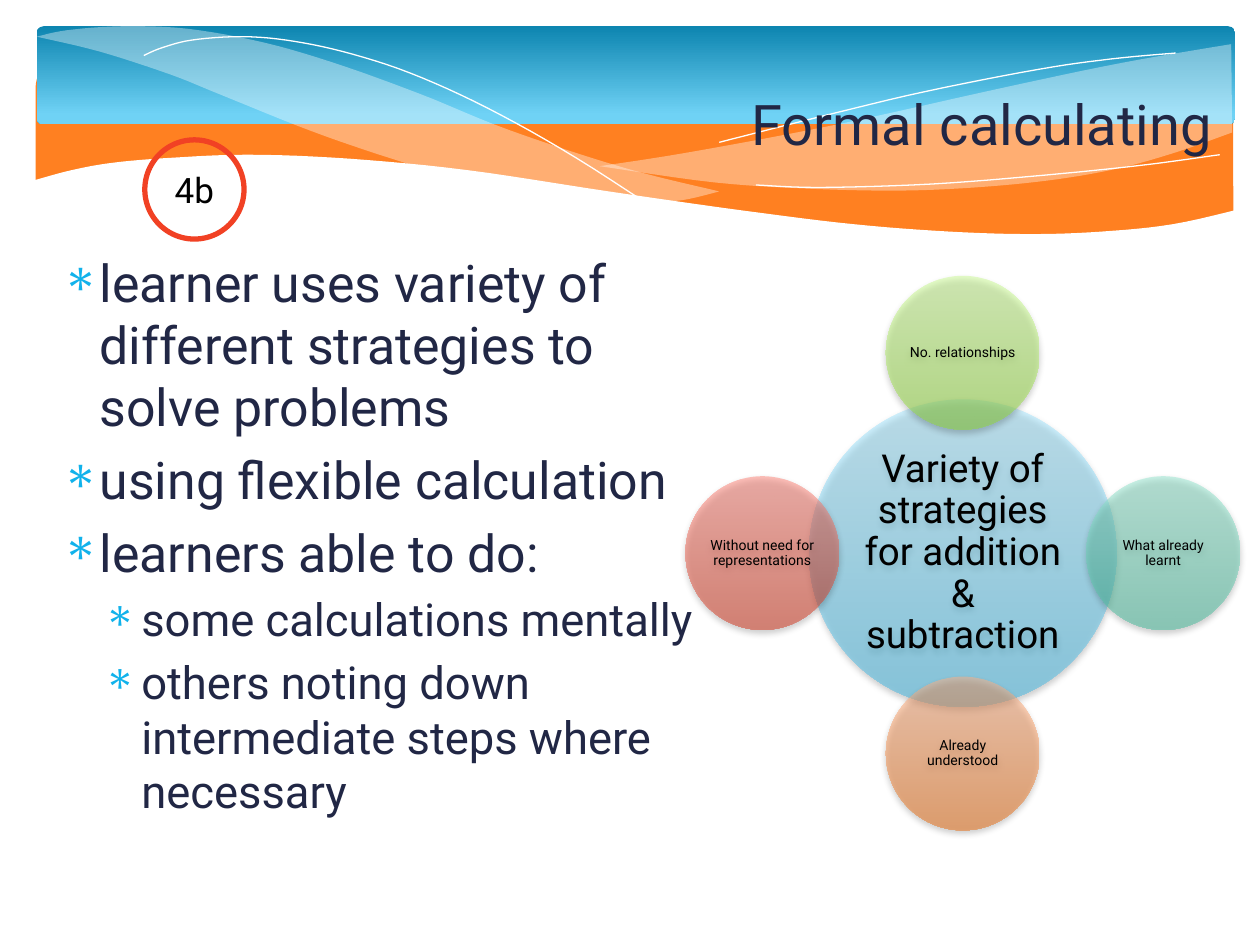
from dataclasses import dataclass
from math import cos, radians, sin

from lxml import etree
from pptx import Presentation
from pptx.dml.color import RGBColor
from pptx.enum.shapes import MSO_SHAPE
from pptx.enum.text import MSO_ANCHOR, PP_ALIGN
from pptx.oxml.ns import qn
from pptx.util import Cm, Pt

ROUNDED, ELLIPSE = MSO_SHAPE.ROUNDED_RECTANGLE, MSO_SHAPE.OVAL
MIDDLE, TOP = MSO_ANCHOR.MIDDLE, MSO_ANCHOR.TOP
CENTER, RIGHT = PP_ALIGN.CENTER, PP_ALIGN.RIGHT

FONT = "Roboto"
WHITE = RGBColor(0xFF, 0xFF, 0xFF)
BLACK = RGBColor(0x00, 0x00, 0x00)
NAVY = RGBColor(0x21, 0x27, 0x45)
ORANGE = RGBColor(0xFF, 0x80, 0x21)
RED = RGBColor(0xF1, 0x41, 0x24)
BULLET_BLUE = RGBColor(0x11, 0xB2, 0xEB)
SKY = (RGBColor(0x0D, 0x85, 0xB0), RGBColor(0x6F, 0xD2, 0xF5))
BLUE = (RGBColor(0xA6, 0xE7, 0xFF), RGBColor(0x3D, 0xB8, 0xE3))
GREEN = (RGBColor(0xCC, 0xFB, 0x94), RGBColor(0x91, 0xDA, 0x35))
TEAL = (RGBColor(0x94, 0xE6, 0xCF), RGBColor(0x43, 0xBC, 0x9B))
AMBER = (RGBColor(0xFF, 0xB1, 0x85), RGBColor(0xE9, 0x6B, 0x0D))
CORAL = (RGBColor(0xFF, 0x83, 0x77), RGBColor(0xD4, 0x33, 0x19))

Points = list[tuple[float, float]]


@dataclass
class Wave:
    """Smooth edges in cm, joined at corners; opacity None means a thin open line."""
    edges: list[Points]
    opacity: int | None = None


@dataclass
class Bubble:
    text: str
    colors: tuple[RGBColor, RGBColor]
    angle: float


@dataclass
class Bullet:
    text: str
    level: int = 0


WAVES = [
    Wave([[(24.82, 0.89), (22.6, 1.27), (20.17, 1.78), (16.87, 2.51), (13.89, 3.07), (12.09, 3.35)],
          [(12.09, 3.35), (14.43, 3.68), (16.46, 3.81), (18.29, 3.84), (19.91, 3.76),
           (21.34, 3.61), (22.61, 3.38), (23.77, 3.05), (24.84, 2.67)]], 37),
    Wave([[(14.5, 3.86), (12.57, 3.38), (10.26, 2.62), (8.51, 1.91), (6.83, 1.3),
           (5.33, 0.86), (3.78, 0.58), (2.44, 0.53), (1.35, 0.61), (0.74, 0.74)],
          [(0.74, 0.74), (2.01, 1.04), (3.43, 1.5), (4.45, 1.91), (6.27, 2.64), (7.9, 3.2),
           (9.35, 3.63), (10.64, 3.91), (11.79, 4.06), (12.8, 4.09), (13.72, 4.04), (14.5, 3.86)]], 37),
    Wave([[(2.9, 1.12), (3.25, 0.97), (3.86, 0.81), (4.83, 0.74), (5.77, 0.81),
           (6.91, 1.04), (8.26, 1.47), (9.83, 2.18), (11.61, 3.18), (13.64, 4.5)]]),
    Wave([[(14.5, 2.87), (16.59, 2.34), (18.64, 1.85), (20.93, 1.4), (22.4, 1.19), (23.7, 1.07)]]),
    Wave([[(25.1, 4.19), (23.65, 4.52), (22.2, 4.67), (20.78, 4.72), (19.15, 4.67),
           (17.2, 4.52), (14.94, 4.24), (12.27, 3.86), (9.42, 3.43), (7.04, 3.2),
           (5.05, 3.12), (3.48, 3.18), (2.29, 3.28), (1.45, 3.43), (0.71, 3.63)],
          [(0.71, 5.61), (25.1, 5.61)]], 100),
    Wave([[(24.59, 3.12), (23.04, 3.33), (21.08, 3.53), (18.8, 3.71), (16.54, 3.78), (15.24, 3.73)]]),
]
BULLETS = [
    Bullet("learner uses variety of different strategies to solve problems"),
    Bullet("using flexible calculation"),
    Bullet("learners able to do:"),
    Bullet("some calculations mentally", 1),
    Bullet("others noting down intermediate steps where necessary", 1),
]
LEVEL_SIZES = (29.6, 25.9)
LEVEL_MARGINS = (0.76, 1.6)
LEVEL_GAPS = (6, 5)
HUB = Bubble("Variety of strategies for addition & subtraction", BLUE, 0)
SATELLITES = [
    Bubble("No. relationships", GREEN, -90),
    Bubble("What already learnt", TEAL, 0),
    Bubble("Already understood", AMBER, 90),
    Bubble("Without need for representations", CORAL, 180),
]
HUB_X, HUB_Y, ORBIT = 19.41, 11.15, 4.04


def smooth(points: Points, steps: int = 6) -> Points:
    """Sample a Catmull-Rom curve through the points."""
    if len(points) < 3:
        return points
    padded = [points[0], *points, points[-1]]
    curve = [points[0]]
    for a, b, c, d in zip(padded, padded[1:], padded[2:], padded[3:]):
        for step in range(1, steps + 1):
            t = step / steps
            curve.append(tuple(
                0.5 * (2 * q + (r - p) * t + (2 * p - 5 * q + 4 * r - s) * t ** 2
                       + (3 * q - p - 3 * r + s) * t ** 3)
                for p, q, r, s in zip(a, b, c, d)))
    return curve


def set_opacity(shape, percent: int) -> None:
    for color in shape._element.spPr.iter(qn("a:srgbClr")):
        etree.SubElement(color, qn("a:alpha"), val=str(percent * 1000))


def fill_downward(shape, colors: tuple[RGBColor, RGBColor], end: float = 1) -> None:
    shape.fill.gradient()
    shape.fill.gradient_angle = 270
    for stop, color, position in zip(shape.fill.gradient_stops, colors, (0, end)):
        stop.color.rgb = color
        stop.position = position


def add_plain_shape(slide, kind, left: float, top: float, width: float, height: float):
    shape = slide.shapes.add_shape(kind, Cm(left), Cm(top), Cm(width), Cm(height))
    shape.shadow.inherit = False
    shape.line.fill.background()
    return shape


def add_wave(slide, wave: Wave) -> None:
    outline = [(Cm(x), Cm(y)) for edge in wave.edges for x, y in smooth(edge)]
    closed = wave.opacity is not None
    builder = slide.shapes.build_freeform(*outline[0], scale=1.0)
    builder.add_line_segments(outline[1:], close=closed)
    shape = builder.convert_to_shape()
    shape.shadow.inherit = False
    if closed:
        shape.fill.solid()
        shape.fill.fore_color.rgb = WHITE
        set_opacity(shape, wave.opacity)
        shape.line.fill.background()
    else:
        shape.fill.background()
        shape.line.color.rgb = WHITE
        shape.line.width = Pt(0)


def add_span(para, text: str, size: float, color: RGBColor) -> None:
    span = para.add_run()
    span.text = text
    span.font.name = FONT
    span.font.size = Pt(size)
    span.font.color.rgb = color


def write_line(shape, text: str, size: float, color: RGBColor, align, inset: float):
    frame = shape.text_frame
    frame.word_wrap = True
    frame.vertical_anchor = MIDDLE
    frame.margin_left = frame.margin_right = frame.margin_top = frame.margin_bottom = Cm(inset)
    para = frame.paragraphs[0]
    para.alignment = align
    add_span(para, text, size, color)
    return para


def add_bubble(slide, bubble: Bubble, x: float, y: float, diameter: float, size: float, inset: float) -> None:
    shape = add_plain_shape(slide, ELLIPSE, x - diameter / 2, y - diameter / 2, diameter, diameter)
    fill_downward(shape, bubble.colors)
    set_opacity(shape, 50)
    effects = shape._element.spPr.find(qn("a:effectLst"))
    shadow = etree.SubElement(effects, qn("a:outerShdw"), blurRad=str(Pt(4)), dist=str(Pt(2)),
                              dir="5400000", rotWithShape="0")
    color = etree.SubElement(shadow, qn("a:srgbClr"), val=str(BLACK))
    etree.SubElement(color, qn("a:alpha"), val="38000")
    write_line(shape, bubble.text, size, BLACK, CENTER, inset).line_spacing = 0.9


def add_bullets(slide, bullets: list[Bullet]) -> None:
    box = slide.shapes.add_textbox(Cm(1), Cm(4.93), Cm(13.31), Cm(13.44))
    frame = box.text_frame
    frame.word_wrap = True
    frame.vertical_anchor = TOP
    for index, bullet in enumerate(bullets):
        para = frame.add_paragraph() if index else frame.paragraphs[0]
        para.level = bullet.level
        properties = para._p.get_or_add_pPr()
        properties.set("marL", str(Cm(LEVEL_MARGINS[bullet.level])))
        properties.set("indent", str(Cm(-0.76)))
        para.space_before = Pt(LEVEL_GAPS[bullet.level] if index else 0)
        tint = etree.SubElement(properties, qn("a:buClr"))
        etree.SubElement(tint, qn("a:srgbClr"), val=str(BULLET_BLUE))
        etree.SubElement(properties, qn("a:buFont"), typeface="Symbol")
        etree.SubElement(properties, qn("a:buChar"), char="∗")
        add_span(para, bullet.text, LEVEL_SIZES[bullet.level], NAVY)


def main() -> None:
    deck = Presentation()
    deck.slide_width, deck.slide_height = Cm(25.4), Cm(19.05)
    slide = deck.slides.add_slide(deck.slide_layouts.get_by_name("Title Only"))

    base = add_plain_shape(slide, ROUNDED, 0.74, 1.12, 24.1, 3.96)
    base.fill.solid()
    base.fill.fore_color.rgb = base.line.color.rgb = ORANGE
    base.line.width = Pt(1.25)
    band = add_plain_shape(slide, ROUNDED, 0.74, 0.53, 24.16, 1.98)
    band.adjustments[0] = 0.07
    fill_downward(band, SKY, 0.9)
    for wave in WAVES:
        add_wave(slide, wave)

    add_bullets(slide, BULLETS)
    title = slide.shapes.title
    title.left, title.top, title.width, title.height = Cm(2.9), Cm(0.74), Cm(21.79), Cm(3.48)
    write_line(title, "Formal calculating", 32, NAVY, RIGHT, 0.25)
    slide.shapes._spTree.append(title._element)

    add_bubble(slide, HUB, HUB_X, HUB_Y, 6.2, 22, 0.08)
    for satellite in SATELLITES:
        turn = radians(satellite.angle)
        add_bubble(slide, satellite, HUB_X + ORBIT * cos(turn), HUB_Y + ORBIT * sin(turn), 3.1, 8, 0.03)

    badge = add_plain_shape(slide, ELLIPSE, 2.92, 2.82, 2, 2)
    badge.fill.background()
    badge.line.color.rgb = RED
    badge.line.width = Pt(3)
    write_line(badge, "4b", 20, BLACK, CENTER, 0.1)


    deck.save("out.pptx")


if __name__ == "__main__":
    main()
